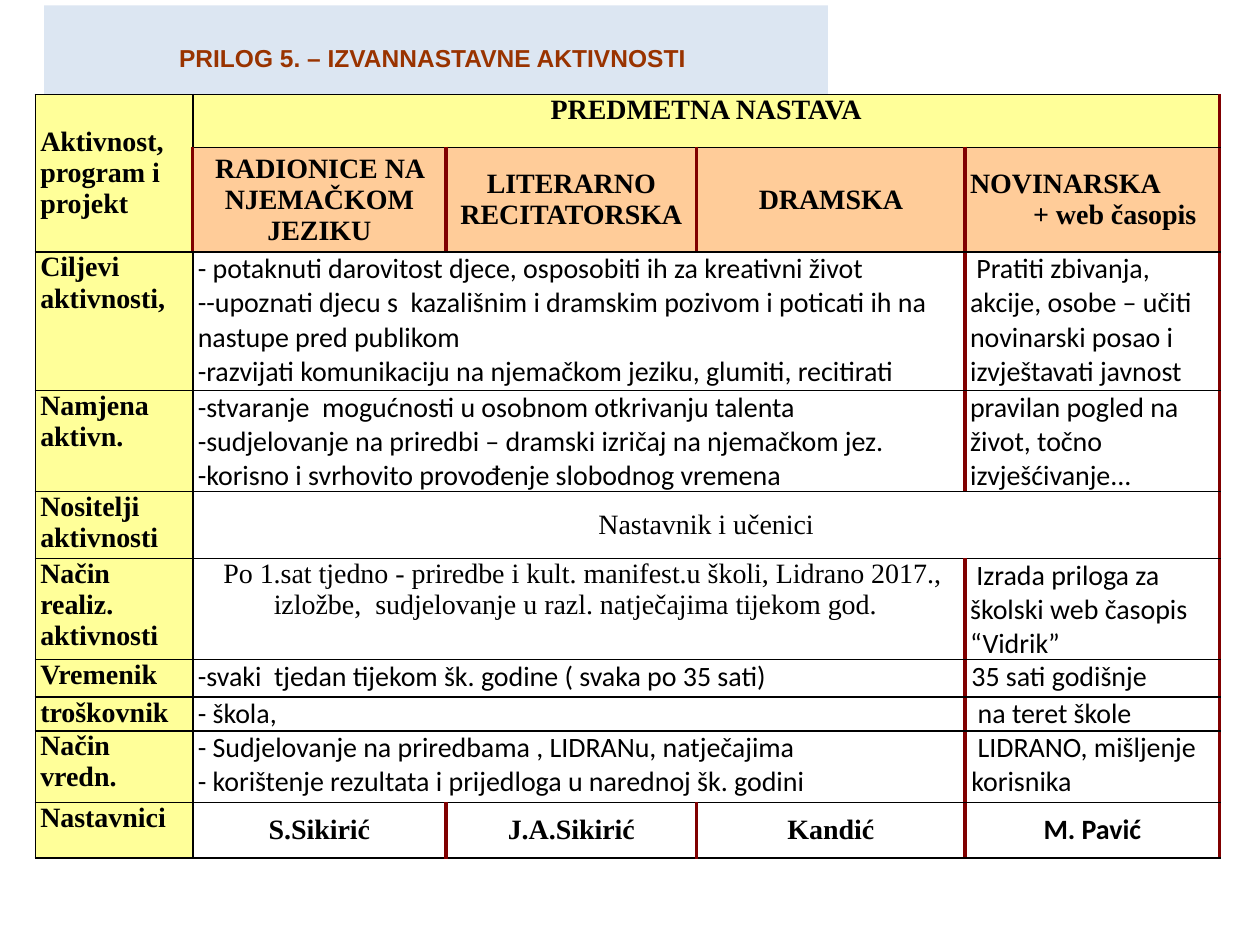
from dataclasses import dataclass, replace
from itertools import product

from lxml import etree
from pptx import Presentation
from pptx.dml.color import RGBColor
from pptx.enum.text import MSO_ANCHOR, MSO_AUTO_SIZE, PP_ALIGN
from pptx.oxml.ns import qn
from pptx.util import Inches, Pt

LEFT, CENTER = PP_ALIGN.LEFT, PP_ALIGN.CENTER
TOP, MIDDLE = MSO_ANCHOR.TOP, MSO_ANCHOR.MIDDLE
GROW = MSO_AUTO_SIZE.SHAPE_TO_FIT_TEXT

SERIF, SANS = "Times New Roman", "Calibri"
BLACK, MAROON, WHITE = "000000", "800000", "FFFFFF"
YELLOW, ORANGE = "FFFF99", "FFCC99"
THIN, THICK = (BLACK, 1), (MAROON, 2.25)

COLUMNS = (1.25, 2.01, 1.99, 2.13, 2.02)
ROWS = (0.42, 0.83, 1.1, 0.8, 0.53, 0.8, 0.3, 0.26, 0.57, 0.44)


@dataclass(frozen=True)
class Block:
    row: int
    col: int
    lines: tuple
    rows: int = 1
    cols: int = 1
    font: str = SERIF
    bold: bool = True
    align: int = LEFT
    anchor: int = TOP
    fill: str = ""
    inset: float = 0.04
    left: tuple = THICK
    right: tuple = THICK
    last_indent: float = 0


LABEL = Block(0, 0, (), fill=YELLOW, left=THIN, right=THIN)
WIDE = Block(0, 1, (), cols=3, font=SANS, bold=False, left=THIN)
SIDE = Block(0, 4, (), font=SANS, bold=False)
CENTERED = Block(0, 1, (), align=CENTER, anchor=MIDDLE)
GROUP = replace(CENTERED, row=1, fill=ORANGE)
TEACHER = replace(CENTERED, row=9)

LABELS = (
    "Ciljevi aktivnosti,",
    "Namjena aktivn.",
    "Nositelji aktivnosti",
    "Način realiz. aktivnosti",
    "Vremenik",
    "troškovnik",
    "Način vredn.",
    "Nastavnici",
)

BLOCKS = [
    replace(LABEL, lines=("Aktivnost, program i projekt",), rows=2, anchor=MIDDLE),
    replace(CENTERED, lines=("PREDMETNA NASTAVA",), cols=4, anchor=TOP,
            fill=YELLOW, left=THIN),
    replace(GROUP, lines=("RADIONICE NA NJEMAČKOM JEZIKU",)),
    replace(GROUP, col=2, lines=("LITERARNO RECITATORSKA",)),
    replace(GROUP, col=3, lines=("DRAMSKA",)),
    replace(GROUP, col=4, lines=("NOVINARSKA", "+ web časopis"), align=LEFT,
            last_indent=0.5),
    *(replace(LABEL, row=i, lines=(text,)) for i, text in enumerate(LABELS, 2)),
    replace(WIDE, row=2, fill=WHITE, lines=(
        "- potaknuti darovitost djece, osposobiti ih za kreativni život",
        "--upoznati djecu s  kazališnim i dramskim pozivom i poticati ih na  nastupe pred publikom",
        "-razvijati komunikaciju na njemačkom jeziku, glumiti, recitirati")),
    replace(SIDE, row=2, fill=WHITE, lines=(
        " Pratiti zbivanja, akcije, osobe – učiti novinarski posao i izvještavati javnost",)),
    replace(WIDE, row=3, lines=(
        "-stvaranje  mogućnosti u osobnom otkrivanju talenta",
        "-sudjelovanje na priredbi – dramski izričaj na njemačkom jez.",
        "-korisno i svrhovito provođenje slobodnog vremena")),
    replace(SIDE, row=3, lines=("pravilan pogled na život, točno izvješćivanje...",)),
    replace(CENTERED, row=4, cols=4, bold=False, left=THIN,
            lines=("Nastavnik i učenici",)),
    replace(WIDE, row=5, font=SERIF, align=CENTER, lines=(
        " Po 1.sat tjedno - priredbe i kult. manifest.u školi, Lidrano 2017., "
        "izložbe,  sudjelovanje u razl. natječajima tijekom god. ",)),
    replace(SIDE, row=5, lines=(" Izrada priloga za školski web časopis “Vidrik”",)),
    replace(WIDE, row=6, lines=("-svaki  tjedan tijekom šk. godine ( svaka po 35 sati)",)),
    replace(SIDE, row=6, inset=0.05, lines=("35 sati godišnje",)),
    replace(WIDE, row=7, lines=("- škola,",)),
    replace(SIDE, row=7, inset=0.05, lines=(" na teret škole",)),
    replace(WIDE, row=8, lines=(
        "- Sudjelovanje na priredbama , LIDRANu, natječajima",
        "- korištenje rezultata i prijedloga u narednoj šk. godini")),
    replace(SIDE, row=8, inset=0.05, lines=(" LIDRANO, mišljenje korisnika",)),
    replace(TEACHER, lines=("S.Sikirić",), left=THIN),
    replace(TEACHER, col=2, lines=("J.A.Sikirić",)),
    replace(TEACHER, col=3, lines=("Kandić",)),
    replace(TEACHER, col=4, lines=("M. Pavić",), font=SANS, inset=0.05),
]


def rgb(value: str) -> RGBColor:
    return RGBColor.from_string(value)


def add_run(p, text: str, font: str, size: float, color: str, bold: bool) -> None:
    r = p.add_run()
    r.text = text
    r.font.name, r.font.size, r.font.bold = font, Pt(size), bold
    r.font.color.rgb = rgb(color)


def set_border(cell, side: str, color: str, width: float) -> None:
    line = etree.SubElement(cell._tc.get_or_add_tcPr(), qn(f"a:ln{side}"), w=str(Pt(width)))
    fill = etree.SubElement(line, qn("a:solidFill"))
    etree.SubElement(fill, qn("a:srgbClr"), val=color)


def format_cell(cell, block: Block) -> None:
    edges = zip("LRTB", (block.left, block.right, THIN, THIN))
    for side, (color, width) in edges:
        set_border(cell, side, color, width)
    if block.fill:
        cell.fill.solid()
        cell.fill.fore_color.rgb = rgb(block.fill)
    else:
        cell.fill.background()
    cell.margin_left = cell.margin_right = Inches(block.inset)
    cell.margin_top = cell.margin_bottom = 0


def fill_block(table, block: Block) -> None:
    covered = product(range(block.row, block.row + block.rows),
                      range(block.col, block.col + block.cols))
    for row, col in covered:
        format_cell(table.cell(row, col), block)
    cell = table.cell(block.row, block.col)
    if block.rows * block.cols > 1:
        cell.merge(table.cell(block.row + block.rows - 1, block.col + block.cols - 1))
    cell.vertical_anchor = block.anchor
    tf = cell.text_frame
    for i, text in enumerate(block.lines):
        p = tf.add_paragraph() if i else tf.paragraphs[0]
        p.alignment = block.align
        add_run(p, text, block.font, 16, BLACK, block.bold)
    if block.last_indent:
        p._p.get_or_add_pPr().set("marL", str(Inches(block.last_indent)))


def add_title(s) -> None:
    sp = s.shapes.title
    sp.left, sp.top, sp.width, sp.height = map(Inches, (0.35, 0.29, 6.22, 0.34))
    sp.fill.solid()
    sp.fill.fore_color.rgb = rgb("DCE6F2")
    tf = sp.text_frame
    tf.auto_size = GROW
    p = tf.paragraphs[0]
    p.alignment = CENTER
    add_run(p, "PRILOG 5. – IZVANNASTAVNE AKTIVNOSTI ", "Arial", 14, "993300", True)


def add_activities(s) -> None:
    box = map(Inches, (0.28, 0.75, sum(COLUMNS), sum(ROWS)))
    table = s.shapes.add_table(len(ROWS), len(COLUMNS), *box).table
    table.first_row = table.horz_banding = False
    for column, width in zip(table.columns, COLUMNS):
        column.width = Inches(width)
    for row, height in zip(table.rows, ROWS):
        row.height = Inches(height)
    for block in BLOCKS:
        fill_block(table, block)


def main() -> None:
    prs = Presentation()
    prs.slide_width, prs.slide_height = Inches(10), Inches(7.5)
    s = prs.slides.add_slide(prs.slide_layouts[5])
    add_title(s)
    add_activities(s)
    prs.save("out.pptx")


if __name__ == "__main__":
    main()
